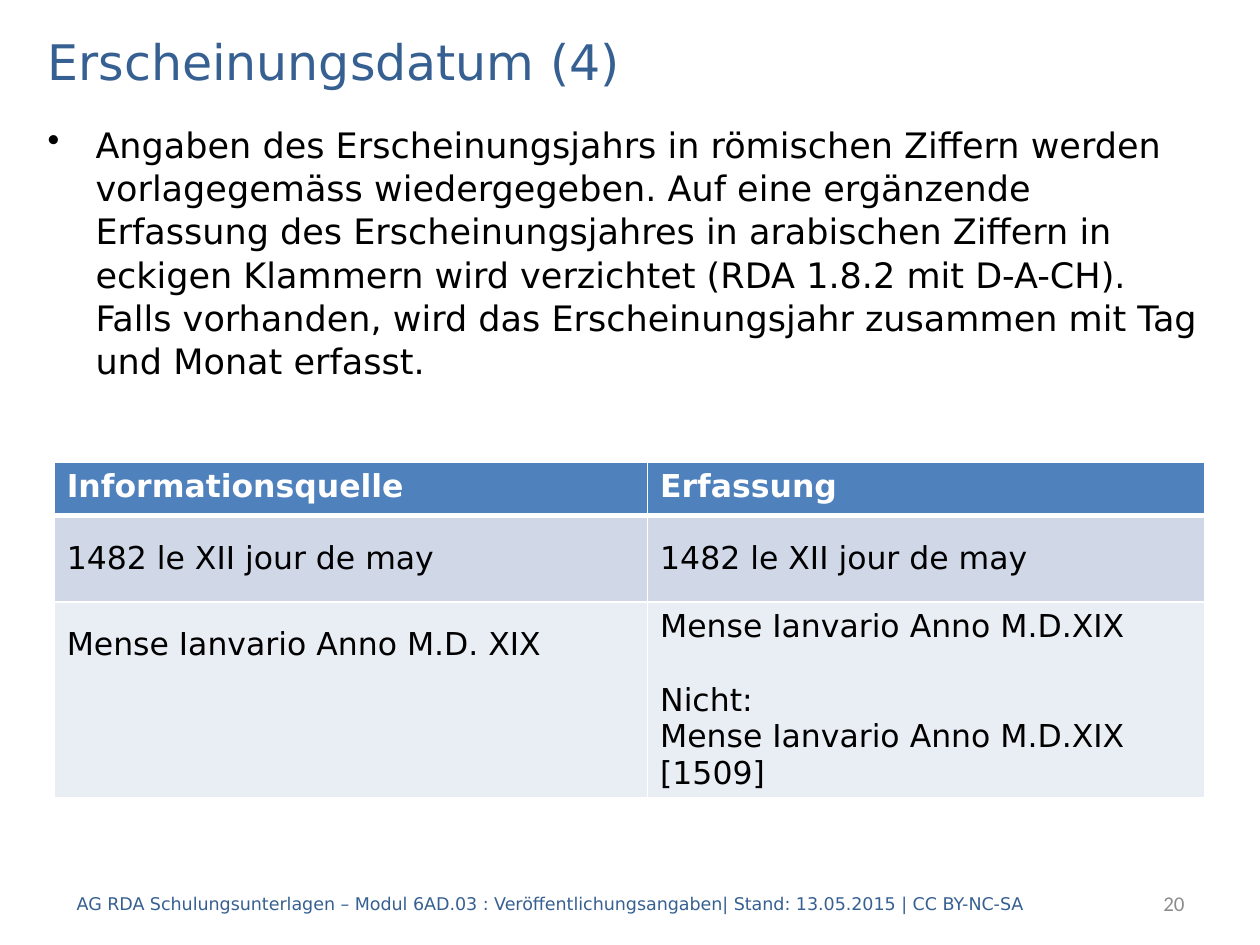
from dataclasses import dataclass

import pptx
import pptx.dml.color
import pptx.enum.text
import pptx.oxml
import pptx.oxml.ns
import pptx.util
from pptx.util import Inches

ALIGN = pptx.enum.text.PP_ALIGN
ANCHOR = pptx.enum.text.MSO_ANCHOR
SANS = "DejaVu Sans"
BLUE, BLACK, WHITE, GREY = "376092", "000000", "FFFFFF", "8C8C8C"


@dataclass
class Style:
    size: float
    color: str
    font: str = SANS
    bold: bool = False
    align: ALIGN = ALIGN.LEFT


@dataclass
class TextBox:
    text: str
    left: float
    top: float
    width: float
    height: float
    style: Style
    anchor: ANCHOR = ANCHOR.MIDDLE


@dataclass
class TableRow:
    cells: tuple[str, str]
    height: float
    fill: str
    style: Style
    anchor: ANCHOR
    bottom_line: float = 1


def rgb(color: str) -> pptx.dml.color.RGBColor:
    return pptx.dml.color.RGBColor.from_string(color)


def format_paragraph(para, style: Style) -> None:
    para.alignment = style.align
    para.font.name = style.font
    para.font.size = pptx.util.Pt(style.size)
    para.font.bold = style.bold
    para.font.color.rgb = rgb(style.color)


def fill_box(shape, box: TextBox):
    """Place a shape, set its text and return its paragraph."""
    shape.left, shape.top = Inches(box.left), Inches(box.top)
    shape.width, shape.height = Inches(box.width), Inches(box.height)
    frame = shape.text_frame
    frame.text = box.text
    frame.word_wrap = True
    frame.auto_size = pptx.enum.text.MSO_AUTO_SIZE.NONE
    frame.vertical_anchor = box.anchor
    format_paragraph(frame.paragraphs[0], box.style)
    return frame.paragraphs[0]


def add_text(page, box: TextBox):
    return fill_box(page.shapes.add_textbox(0, 0, 0, 0), box)


def add_bullet(para, indent: float) -> None:
    properties = para._p.get_or_add_pPr()
    properties.set("marL", str(Inches(indent)))
    properties.set("indent", str(-Inches(indent)))
    bullet = pptx.oxml.parse_xml(
        f'<a:buChar {pptx.oxml.ns.nsdecls("a")} char="•"/>')
    properties.append(bullet)


def set_borders(cell, top: float, bottom: float) -> None:
    """Draw white cell borders; widths are in points."""
    properties = cell._tc.get_or_add_tcPr()
    widths = {"lnL": 1, "lnR": 1, "lnT": top, "lnB": bottom}
    for position, (tag, width) in enumerate(widths.items()):
        line = pptx.oxml.parse_xml(
            f'<a:{tag} {pptx.oxml.ns.nsdecls("a")} w="{pptx.util.Pt(width)}">'
            f'<a:solidFill><a:srgbClr val="{WHITE}"/></a:solidFill></a:{tag}>')
        properties.insert(position, line)


def add_table(page, left: float, top: float, widths: list[float],
              rows: list[TableRow]):
    height = sum(row.height for row in rows)
    table = page.shapes.add_table(
        len(rows), len(widths), Inches(left), Inches(top),
        Inches(sum(widths)), Inches(height)).table
    for column, width in zip(table.columns, widths):
        column.width = Inches(width)
    line_above = 1
    for index, row in enumerate(rows):
        table.rows[index].height = Inches(row.height)
        for cell, text in zip(table.rows[index].cells, row.cells):
            cell.text = text
            cell.vertical_anchor = row.anchor
            cell.fill.solid()
            cell.fill.fore_color.rgb = rgb(row.fill)
            set_borders(cell, line_above, row.bottom_line)
            for para in cell.text_frame.paragraphs:
                format_paragraph(para, row.style)
        line_above = row.bottom_line
    return table


def main() -> None:
    deck = pptx.Presentation()
    deck.slide_width, deck.slide_height = Inches(10), Inches(7.5)
    page = deck.slides.add_slide(deck.slide_layouts[5])

    fill_box(page.shapes.title, TextBox(
        "Erscheinungsdatum (4)", 0.28, 0.2, 9.45, 0.56, Style(28, BLUE)))

    rule = add_text(page, TextBox(
        "Angaben des Erscheinungsjahrs in römischen Ziffern werden "
        "vorlagegemäss wiedergegeben. Auf eine ergänzende Erfassung des "
        "Erscheinungsjahres in arabischen Ziffern in eckigen Klammern wird "
        "verzichtet (RDA 1.8.2 mit D-A-CH). Falls vorhanden, wird das "
        "Erscheinungsjahr zusammen mit Tag und Monat erfasst.",
        0.28, 0.92, 9.45, 5.98, Style(20, BLACK), ANCHOR.TOP))
    rule.line_spacing = 1.03
    add_bullet(rule, 0.38)

    body = Style(18, BLACK)
    table = add_table(page, 0.43, 3.67, [4.71, 4.42], [
        TableRow(("Informationsquelle", "Erfassung"), 0.42, "4F81BD",
                 Style(18, WHITE, bold=True), ANCHOR.TOP, bottom_line=3),
        TableRow(("1482 le XII jour de may", "1482 le XII jour de may"),
                 0.69, "D0D8E8", body, ANCHOR.MIDDLE),
        TableRow(("Mense Ianvario Anno M.D. XIX",
                  "Mense Ianvario Anno M.D.XIX\nNicht:\n"
                  "Mense Ianvario Anno M.D.XIX [1509]"),
                 1.55, "E9EDF4", body, ANCHOR.TOP),
    ])
    table.cell(2, 0).margin_top = Inches(0.19)
    counterexample = table.cell(2, 1).text_frame.paragraphs[1]
    counterexample.space_before = pptx.util.Pt(21)

    add_text(page, TextBox(
        "20", 8.94, 6.97, 0.56, 0.4,
        Style(12, GREY, "Calibri", align=ALIGN.RIGHT)))
    add_text(page, TextBox(
        "AG RDA Schulungsunterlagen – Modul 6AD.03 : "
        "Veröffentlichungsangaben| Stand: 13.05.2015 | CC BY-NC-SA",
        0.51, 6.97, 8.11, 0.4, Style(10, BLUE)))

    deck.save("out.pptx")


if __name__ == "__main__":
    main()
